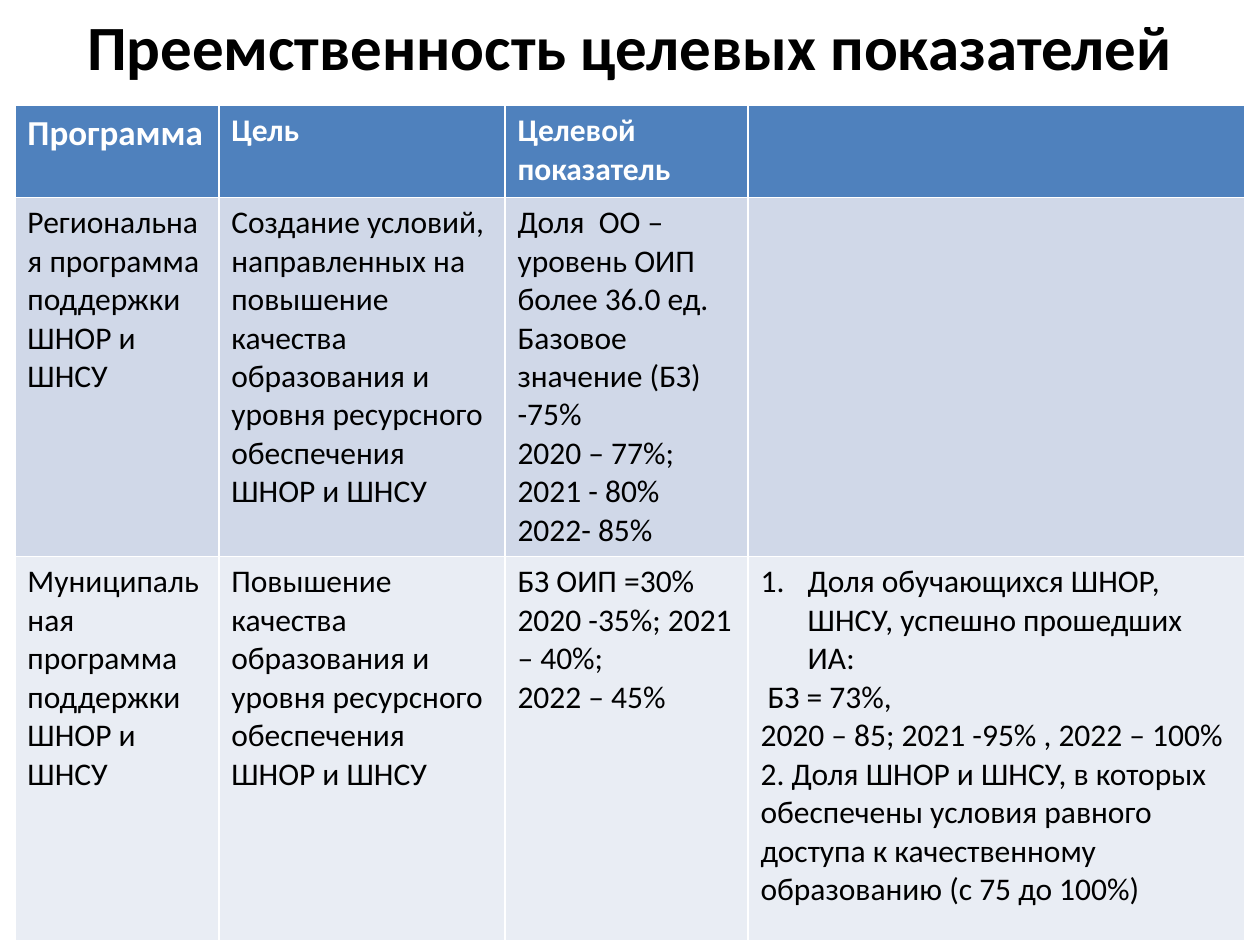
import dataclasses

import pptx
import pptx.dml.color
import pptx.enum.text
import pptx.oxml
import pptx.util

Cm = pptx.util.Cm
Pt = pptx.util.Pt


@dataclasses.dataclass(frozen=True)
class Theme:
    font: str = "Calibri"
    dark: str = "000000"
    light: str = "FFFFFF"
    head: str = "4F81BD"
    bands: tuple = ("D0D8E8", "E9EDF4")
    title: int = 36
    lead: int = 20
    body: int = 18


THEME = Theme()
COLS = (4.11, 5.77, 4.9, 10.01)
ROWS = (1.85, 7.24, 7.75)
CELLS = [
    ["Программа", "Цель", "Целевой показатель", ""],
    [
        "Региональная программа поддержки ШНОР и ШНСУ",
        "Создание условий, направленных на повышение качества образования "
        "и уровня ресурсного обеспечения ШНОР и ШНСУ",
        "Доля  ОО – уровень ОИП более 36.0 ед.\n"
        "Базовое значение (БЗ) -75%\n"
        "2020 – 77%; 2021 - 80%\n"
        "2022- 85%",
        "",
    ],
    [
        "Муниципальная программа поддержки ШНОР и ШНСУ",
        "Повышение качества образования и уровня ресурсного обеспечения  ШНОР и ШНСУ",
        "БЗ ОИП =30%\n2020 -35%; 2021 – 40%;\n2022 – 45%",
        "Доля обучающихся ШНОР, ШНСУ, успешно прошедших ИА:\n"
        " БЗ = 73%,\n"
        "2020 – 85; 2021 -95% , 2022 – 100%\n"
        "2. Доля ШНОР и ШНСУ, в которых обеспечены условия равного доступа "
        "к качественному образованию (с 75 до 100%)",
    ],
]


def color(code):
    return pptx.dml.color.RGBColor.from_string(code)


def style(par, size, tint, bold):
    font = par.font
    font.name, font.size, font.bold = THEME.font, Pt(size), bold
    font.color.rgb = color(tint)


def number(par):
    props = par._p.get_or_add_pPr()
    props.set("marL", str(Cm(0.95)))
    props.set("indent", str(-Cm(0.95)))
    mark = pptx.oxml.parse_xml(
        '<a:buAutoNum xmlns:a="http://schemas.openxmlformats.org/drawingml/2006/main"'
        ' type="arabicPeriod"/>'
    )
    props.append(mark)


def add_title(slide, left, top, width, height):
    frame = slide.shapes.add_textbox(left, top, width, height).text_frame
    frame.word_wrap = True
    frame.vertical_anchor = pptx.enum.text.MSO_ANCHOR.MIDDLE
    frame.text = "Преемственность целевых показателей"
    par = frame.paragraphs[0]
    par.alignment = pptx.enum.text.PP_ALIGN.CENTER
    style(par, THEME.title, THEME.dark, True)


def add_goals(slide, left, top, width, height):
    table = slide.shapes.add_table(
        len(ROWS), len(COLS), left, top, width, height
    ).table
    for col, size in zip(table.columns, COLS):
        col.width = int(width * size / sum(COLS))
    for row, size in zip(table.rows, ROWS):
        row.height = int(height * size / sum(ROWS))

    fills = (THEME.head, *THEME.bands)
    for r, texts in enumerate(CELLS):
        tint = THEME.dark if r else THEME.light
        for c, text in enumerate(texts):
            cell = table.cell(r, c)
            cell.fill.solid()
            cell.fill.fore_color.rgb = color(fills[r])
            cell.text_frame.text = text
            size = THEME.lead if r == c == 0 else THEME.body
            if r == 2 and c == 3:
                number(cell.text_frame.paragraphs[0])
            for par in cell.text_frame.paragraphs:
                style(par, size, tint, r == 0)


def main():
    deck = pptx.Presentation()
    deck.slide_width, deck.slide_height = Cm(25.4), Cm(19.05)
    slide = deck.slides.add_slide(deck.slide_layouts[6])
    add_title(slide, Cm(1.27), Cm(-0.48), Cm(22.86), Cm(2.79))
    add_goals(slide, Cm(0.3), Cm(2.13), Cm(sum(COLS)), Cm(sum(ROWS)))
    deck.save("out.pptx")


if __name__ == "__main__":
    main()
